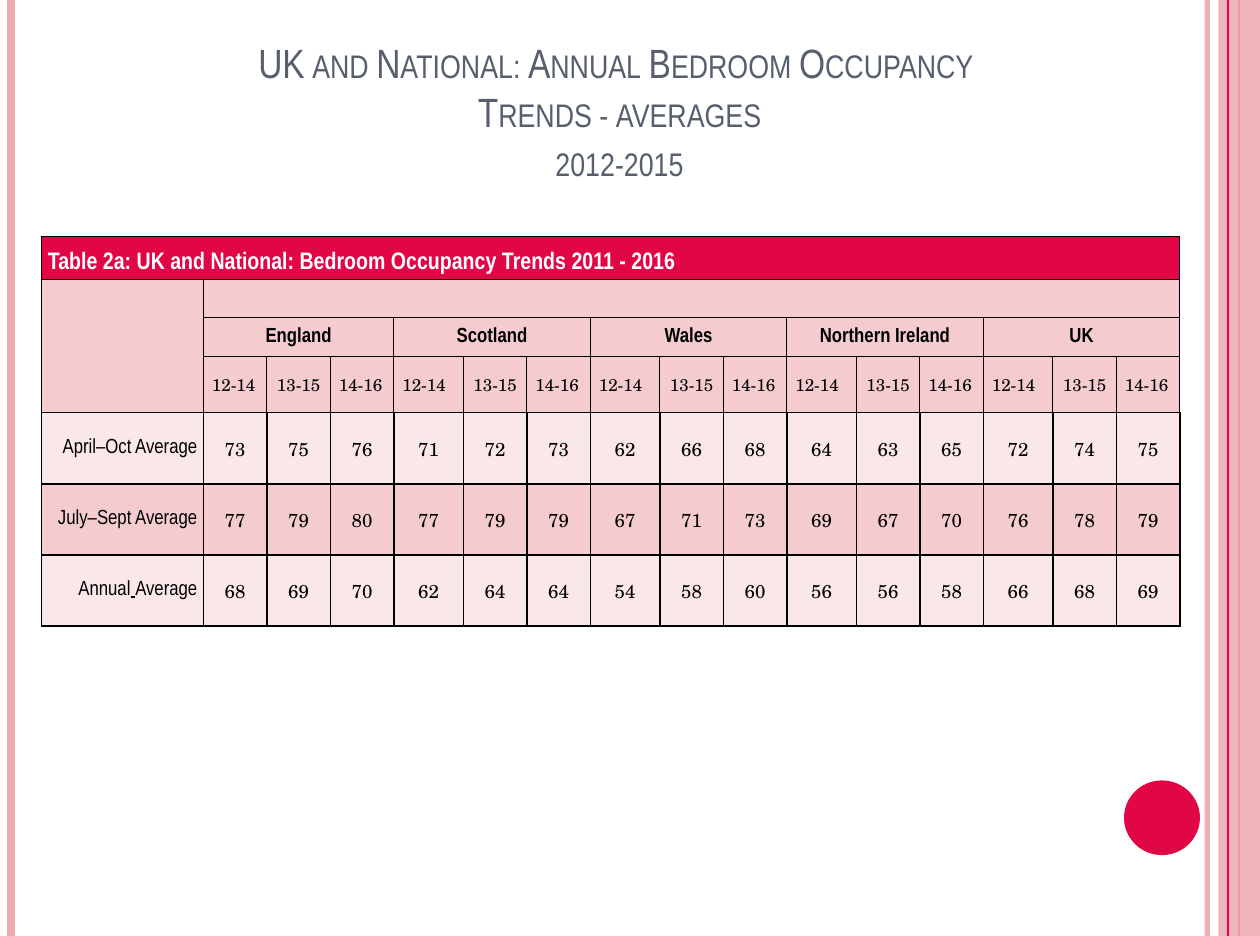
"""Build a slide with a table of UK bedroom occupancy trends."""
from dataclasses import dataclass

from lxml import etree
from pptx import Presentation
from pptx.dml.color import RGBColor
from pptx.enum.shapes import MSO_CONNECTOR, MSO_SHAPE
from pptx.enum.text import MSO_ANCHOR, PP_ALIGN
from pptx.oxml.ns import qn
from pptx.util import Inches, Pt

STRAIGHT = MSO_CONNECTOR.STRAIGHT
RECTANGLE, OVAL = MSO_SHAPE.RECTANGLE, MSO_SHAPE.OVAL
MIDDLE = MSO_ANCHOR.MIDDLE
LEFT, CENTER, RIGHT = PP_ALIGN.LEFT, PP_ALIGN.CENTER, PP_ALIGN.RIGHT


@dataclass(frozen=True)
class Theme:
    crimson: str = "E10747"
    rose: str = "EEABB1"
    pink: str = "F4CCCF"
    blush: str = "F9E7E9"
    slate: str = "575F6D"
    black: str = "000000"
    white: str = "FFFFFF"
    narrow: str = "Arial Narrow"
    serif: str = "TeX Gyre Schola"
    title_size: int = 24
    caption_size: int = 14
    label_size: int = 12
    value_size: int = 11
    year_size: int = 10


theme = Theme()


def add_run(paragraph, text, size, font=theme.narrow, color=theme.black, bold=False):
    run = paragraph.add_run()
    run.text = text
    run.font.size = Pt(size)
    run.font.name = font
    run.font.bold = bold
    run.font.color.rgb = RGBColor.from_string(color)
    return run


def style_cell(cell, fill, border, side=0, top=0, align=LEFT):
    properties = cell._tc.get_or_add_tcPr()
    for edge in ("a:lnL", "a:lnR", "a:lnT", "a:lnB"):
        line = etree.SubElement(properties, qn(edge), w=str(Pt(border)))
        solid = etree.SubElement(line, qn("a:solidFill"))
        etree.SubElement(solid, qn("a:srgbClr"), val=theme.black)
    cell.fill.solid()
    cell.fill.fore_color.rgb = RGBColor.from_string(fill)
    cell.margin_left = cell.margin_right = Inches(side)
    cell.margin_top, cell.margin_bottom = Inches(top), 0
    cell.vertical_anchor = MIDDLE
    paragraph = cell.text_frame.paragraphs[0]
    paragraph.alignment = align
    return paragraph


presentation = Presentation()
presentation.slide_width = Inches(10.28)
presentation.slide_height = Inches(7.64)
slide = presentation.slides.add_slide(presentation.slide_layouts[6])
shapes = slide.shapes

stripes = [(9.85, theme.rose, 3), (0.09, theme.rose, 4.5), (10.11, theme.crimson, 1.5),
           (10.02, theme.crimson, 0.75)]
for x, color, width in stripes:
    if x == 10.02:
        band = shapes.add_shape(RECTANGLE, Inches(9.94), 0, Inches(0.34), Inches(7.64))
        band.shadow.inherit = False
        band.fill.solid()
        band.fill.fore_color.rgb = RGBColor.from_string(theme.rose)
        band.line.fill.background()
        band_color = band._element.spPr.find(".//" + qn("a:srgbClr"))
        etree.SubElement(band_color, qn("a:alpha"), val="87000")
    stripe = shapes.add_connector(STRAIGHT, Inches(x), 0, Inches(x), Inches(7.64))
    stripe.line.color.rgb = RGBColor.from_string(color)
    stripe.line.width = Pt(width)
    etree.SubElement(stripe._element.spPr, qn("a:effectLst"))
    if x == 9.85:
        stripe_color = stripe._element.spPr.find(".//" + qn("a:srgbClr"))
        etree.SubElement(stripe_color, qn("a:alpha"), val="93000")

circle = shapes.add_shape(OVAL, Inches(9.17), Inches(6.37), Inches(0.62), Inches(0.61))
circle.shadow.inherit = False
circle.fill.solid()
circle.fill.fore_color.rgb = RGBColor.from_string(theme.crimson)
circle.line.fill.background()

nations = ["England", "Scotland", "Wales", "Northern Ireland", "UK"]
years = [("12-14", LEFT), ("13-15", CENTER), ("14-16", LEFT)]
averages = [
    (["April–Oct Average"], [73, 75, 76, 71, 72, 73, 62, 66, 68, 64, 63, 65, 72, 74, 75]),
    (["July–Sept Average"], [77, 79, 80, 77, 79, 79, 67, 71, 73, 69, 67, 70, 76, 78, 79]),
    (["Annual", " ", "Average"], [68, 69, 70, 62, 64, 64, 54, 58, 60, 56, 56, 58, 66, 68, 69]),
]

table = shapes.add_table(7, 16, Inches(0.34), Inches(1.93), Inches(9.29), Inches(3.18)).table
table.first_row = table.horz_banding = False
for row, height in zip(table.rows, [0.35, 0.31, 0.32, 0.46, 0.58, 0.58, 0.58]):
    row.height = Inches(height)
label_width, extra_width = 1.32, 0.05
year_width = (9.29 - label_width - 4 * extra_width) / 15
table.columns[0].width = Inches(label_width)
for index in range(15):
    wide = index > 0 and index % 3 == 0
    table.columns[index + 1].width = Inches(year_width + extra_width * wide)

table.cell(0, 0).merge(table.cell(0, 15))
table.cell(1, 0).merge(table.cell(3, 0))
table.cell(1, 1).merge(table.cell(1, 15))
for column in range(1, 16, 3):
    table.cell(2, column).merge(table.cell(2, column + 2))

for column in range(16):
    caption = style_cell(table.cell(0, column), theme.crimson, 0.75, 0.05)
    style_cell(table.cell(1, column), theme.pink, 0.75)
    nation = style_cell(table.cell(2, column), theme.pink, 0.75, 0.05, align=CENTER)
    name, align = years[(column - 1) % 3]
    year = style_cell(table.cell(3, column), theme.pink, 0.75, 0.07, align=align)
    if column == 0:
        caption.line_spacing = 1.5
        caption.space_before = caption.space_after = Pt(2)
        add_run(caption, "Table 2a: UK and National: Bedroom Occupancy Trends 2011 - 2016",
                theme.caption_size, color=theme.white, bold=True)
        continue
    add_run(year, name, theme.year_size, theme.serif)
    if column % 3 == 1:
        add_run(nation, nations[column // 3], theme.label_size, bold=True)

for row, (label_parts, values) in enumerate(averages, start=4):
    fill = theme.pink if row == 5 else theme.blush
    label = style_cell(table.cell(row, 0), fill, 1, 0.05, align=RIGHT)
    for part in label_parts:
        run = add_run(label, part, theme.label_size)
        run.font.underline = part == " "
    for column, value in enumerate(values, start=1):
        paragraph = style_cell(table.cell(row, column), fill, 1, 0.01, 0.01, CENTER)
        add_run(paragraph, str(value), theme.value_size, theme.serif)

title = shapes.add_textbox(Inches(0.49), Inches(0.28), Inches(9.13), Inches(1.26)).text_frame
title.word_wrap = True
title.vertical_anchor = MIDDLE
title_lines = ["UK and National: Annual Bedroom Occupancy ", "Trends - averages", "2012-2015"]
for index, text in enumerate(title_lines):
    paragraph = title.add_paragraph() if index else title.paragraphs[0]
    paragraph.alignment = CENTER
    run = add_run(paragraph, text, theme.title_size, color=theme.slate)
    run._r.get_or_add_rPr().set("cap", "small")

presentation.save("out.pptx")
